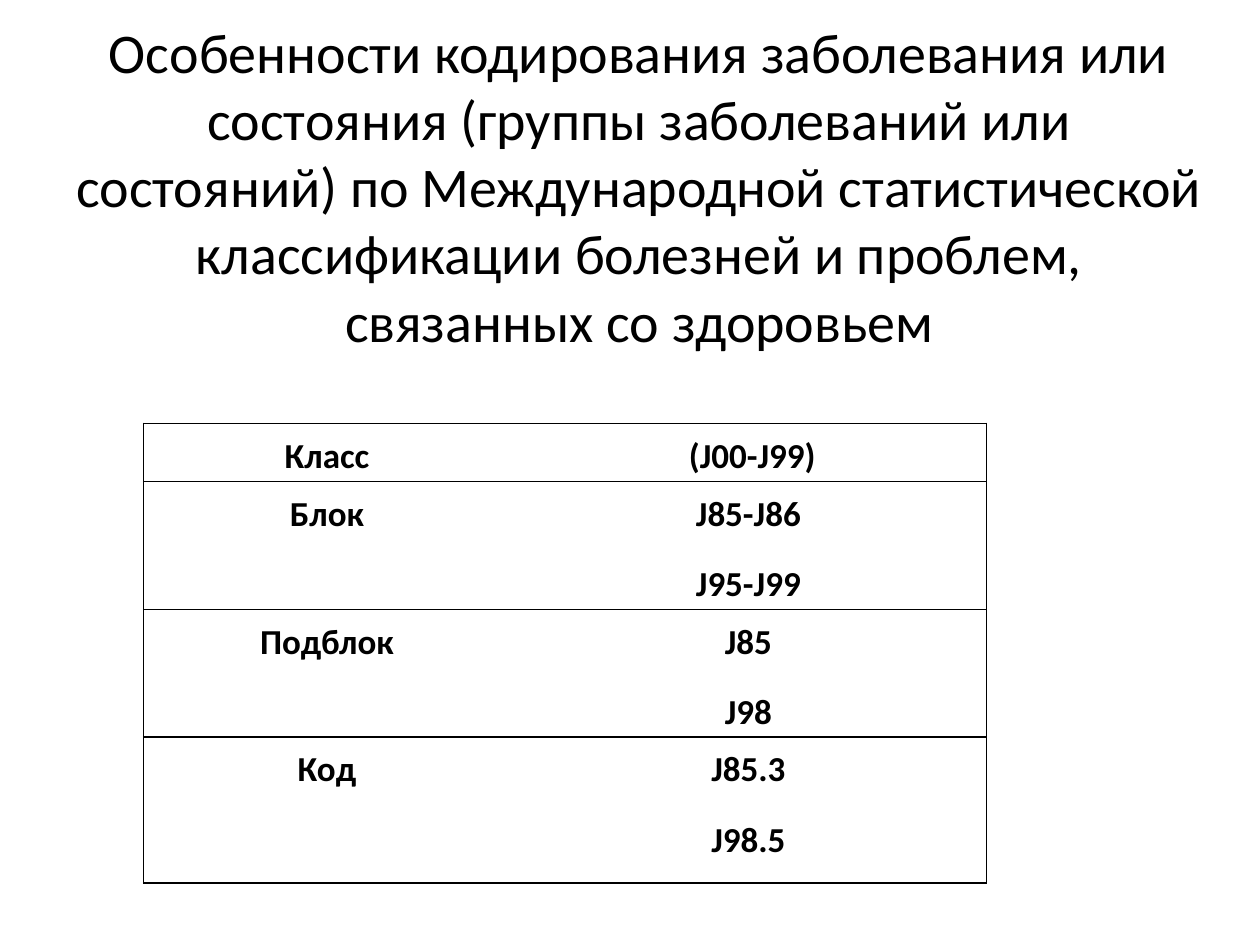
from dataclasses import dataclass

from lxml import etree
from pptx import Presentation
from pptx.dml.color import RGBColor
from pptx.enum.text import MSO_ANCHOR, PP_ALIGN
from pptx.oxml.ns import qn
from pptx.util import Inches, Pt

CENTER = PP_ALIGN.CENTER
MIDDLE = MSO_ANCHOR.MIDDLE
WIDE, HIGH = 10, 7.5


@dataclass(frozen=True)
class Theme:
    face: str = "Calibri"
    ink: str = "000000"
    paper: str = "FFFFFF"
    head: int = 32
    body: int = 20
    rule: int = 1


THEME = Theme()

# Boxes are left, top, width and height as shares of the slide.
HEAD = (0.05, 0.016, 0.915, 0.36)
GRID = (0.114, 0.448, 0.669, 0.453)
COLS = (2.91, 3.78)

TITLE = (
    "Особенности кодирования заболевания или состояния "
    "(группы заболеваний или состояний) по Международной статистической "
    "классификации болезней и проблем, связанных со здоровьем"
)
# Label, codes and row weight.
ROWS = (
    ("Класс", [" (J00-J99)"], 0.34),
    ("Блок", ["J85-J86", "J95-J99"], 0.95),
    ("Подблок", ["J85", "J98"], 0.95),
    ("Код", ["J85.3", "J98.5"], 1.16),
)


def place(box):
    """Turn shares of the slide into lengths."""
    return [Inches(part * side) for part, side in zip(box, (WIDE, HIGH) * 2)]


def split(total, parts):
    return [int(total * part / sum(parts)) for part in parts]


def apply(item, form):
    for name, value in form.items():
        setattr(item, name, value)


def write(frame, lines, size, bold=False, **form):
    """Fill a frame with centred paragraphs."""
    for i, line in enumerate(lines):
        para = frame.add_paragraph() if i else frame.paragraphs[0]
        apply(para, {"alignment": CENTER, **form})
        run = para.add_run()
        run.text = line
        apply(run.font, {"name": THEME.face, "size": Pt(size), "bold": bold})
        run.font.color.rgb = RGBColor.from_string(THEME.ink)


def border(cell, shown):
    """Draw the named sides of a cell and clear the others."""
    props = cell._tc.get_or_add_tcPr()
    for side in "LRTB":
        line = etree.SubElement(props, qn(f"a:ln{side}"), w=str(Pt(THEME.rule)))
        if side in shown:
            fill = etree.SubElement(line, qn("a:solidFill"))
            etree.SubElement(fill, qn("a:srgbClr"), val=THEME.ink)
        else:
            etree.SubElement(line, qn("a:noFill"))


def title(slide, box):
    frame = slide.shapes.add_textbox(*place(box)).text_frame
    apply(frame, {"word_wrap": True, "vertical_anchor": MIDDLE})
    write(frame, [TITLE], THEME.head)


def codes(slide, box):
    left, top, width, height = place(box)
    shape = slide.shapes.add_table(len(ROWS), len(COLS), left, top, width, height)
    table = shape.table
    apply(table, {"first_row": False, "horz_banding": False})
    for col, size in zip(table.columns, split(width, COLS)):
        col.width = size
    for row, size in zip(table.rows, split(height, [r[2] for r in ROWS])):
        row.height = size

    pads = {f"margin_{side}": Inches(gap) for side, gap in
            (("left", 0.07), ("right", 0.07), ("top", 0.04), ("bottom", 0.04))}
    for row, (label, items, _) in zip(table.rows, ROWS):
        for cell, lines, sides in zip(row.cells, ([label], items), ("LTB", "RTB")):
            apply(cell, pads)
            border(cell, sides)
            cell.fill.solid()
            cell.fill.fore_color.rgb = RGBColor.from_string(THEME.paper)
            write(cell.text_frame, lines, THEME.body, bold=True,
                  line_spacing=1.15, space_after=Pt(12))


def main():
    deck = Presentation()
    apply(deck, {"slide_width": Inches(WIDE), "slide_height": Inches(HIGH)})
    slide = deck.slides.add_slide(deck.slide_layouts[6])
    title(slide, HEAD)
    codes(slide, GRID)
    deck.save("out.pptx")


if __name__ == "__main__":
    main()
